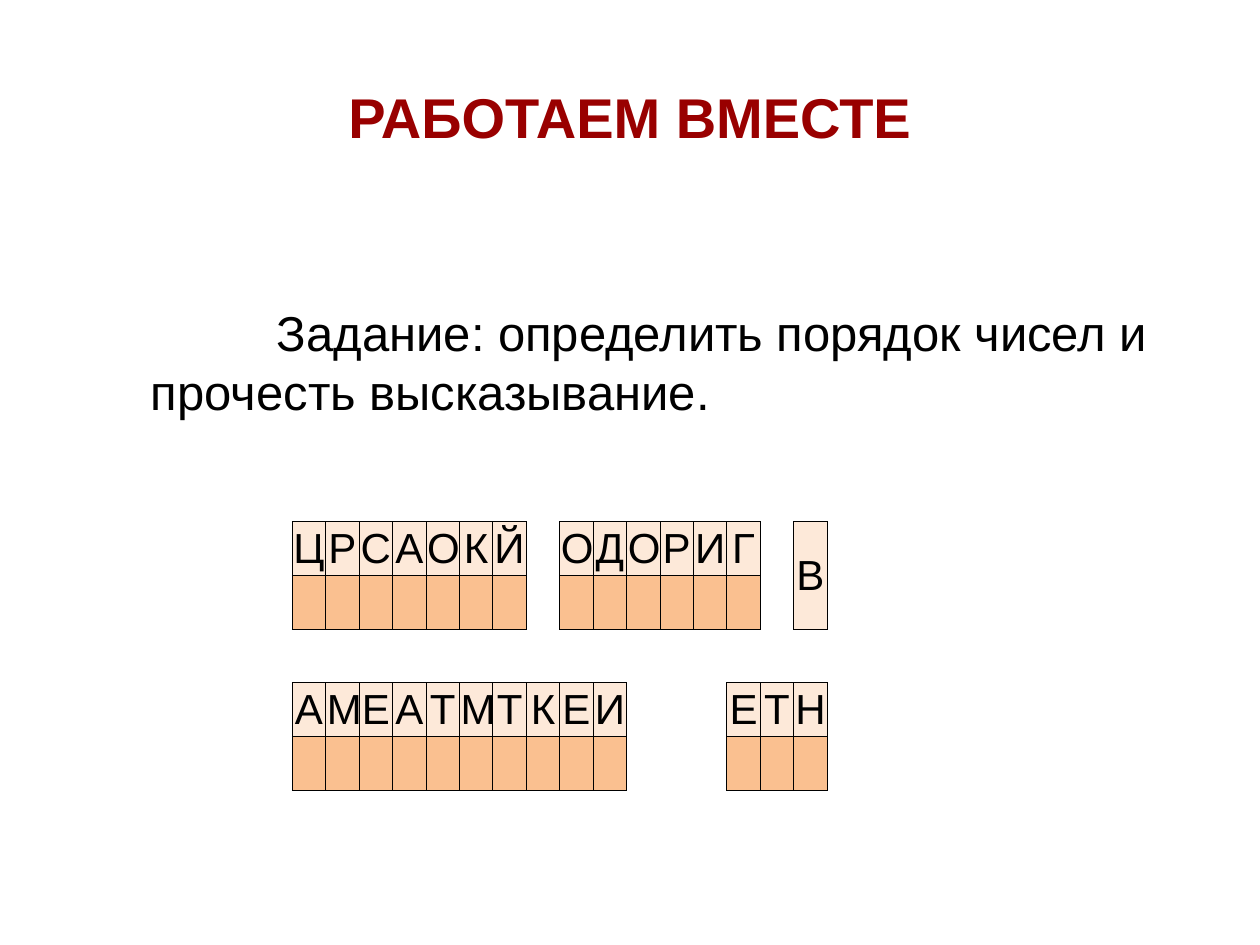
from lxml.etree import SubElement
from pptx import Presentation
from pptx.dml.color import RGBColor
from pptx.enum.text import MSO_ANCHOR as Anchor, PP_ALIGN as Align
from pptx.oxml.ns import qn
from pptx.util import Pt

DARK_RED = RGBColor(0x99, 0x00, 0x00)
BLACK = RGBColor(0x00, 0x00, 0x00)
LETTER_FILL = RGBColor(0xFD, 0xE9, 0xD9)
ANSWER_FILL = RGBColor(0xFA, 0xC0, 0x90)


def write(frame, text, size, color=BLACK, bold=False, align=Align.CENTER):
    paragraph = frame.paragraphs[0]
    paragraph.alignment = align
    run = paragraph.add_run()
    run.text = text
    run.font.name = "Arial"
    run.font.size = Pt(size)
    run.font.bold = bold
    run.font.color.rgb = color
    return paragraph


def add_border(cell, side, visible):
    line = SubElement(cell._tc.get_or_add_tcPr(), qn(f"a:ln{side}"), w=str(Pt(0.5)))
    if visible:
        fill = SubElement(line, qn("a:solidFill"))
        SubElement(fill, qn("a:srgbClr"), val=str(BLACK))
    else:
        SubElement(line, qn("a:noFill"))


deck = Presentation()
deck.slide_width, deck.slide_height = Pt(720), Pt(540)
slide = deck.slides.add_slide(deck.slide_layouts[5])

# Title
title = slide.shapes.title
title.left, title.top, title.width, title.height = Pt(36), Pt(21.6), Pt(648), Pt(90)
title.text_frame.vertical_anchor = Anchor.MIDDLE
write(title.text_frame, "РАБОТАЕМ ВМЕСТЕ", size=32, color=DARK_RED, bold=True)

# Task, with an indented first line
task = slide.shapes.add_textbox(Pt(36), Pt(126), Pt(648), Pt(370.8)).text_frame
task.word_wrap = True
task.margin_top = Pt(47)
task_line = write(task, "Задание: определить порядок чисел и прочесть высказывание.",
                  size=28, align=Align.LEFT)
indents = task_line._p.get_or_add_pPr()
indents.set("marL", str(Pt(43.2)))
indents.set("indent", str(Pt(72)))

# Letter puzzle: a space is a gap, each letter has an answer cell below
WORD_ROWS = {0: "ЦРСАОКЙ ОДОРИГ В", 3: "АМЕАТМТКЕИ   ЕТН"}
ROWS, COLUMNS = 5, 16
letters, fills = {}, {}
for top_row, words in WORD_ROWS.items():
    for column, letter in enumerate(words):
        if letter != " ":
            letters[top_row, column] = letter
            fills[top_row, column] = LETTER_FILL
            fills[top_row + 1, column] = ANSWER_FILL

puzzle = slide.shapes.add_table(ROWS, COLUMNS, Pt(167), Pt(298.1),
                                Pt(306), Pt(153.5)).table
puzzle.first_row = puzzle.horz_banding = False

SIDES = {"L": (0, -1), "R": (0, 1), "T": (-1, 0), "B": (1, 0)}
for row in range(ROWS):
    for column in range(COLUMNS):
        cell = puzzle.cell(row, column)
        for side, (down, right) in SIDES.items():
            neighbour = (row + down, column + right)
            add_border(cell, side, (row, column) in fills or neighbour in fills)
        if (row, column) in fills:
            cell.fill.solid()
            cell.fill.fore_color.rgb = fills[row, column]
        else:
            cell.fill.background()
        if (row, column) in letters:
            cell.vertical_anchor = Anchor.MIDDLE
            cell.margin_left = cell.margin_right = cell.margin_top = Pt(0.7)
            cell.margin_bottom = 0
            write(cell.text_frame, letters[row, column], size=24)

# The one-letter word needs no answer cell
puzzle.cell(0, COLUMNS - 1).merge(puzzle.cell(1, COLUMNS - 1))

deck.save("out.pptx")
